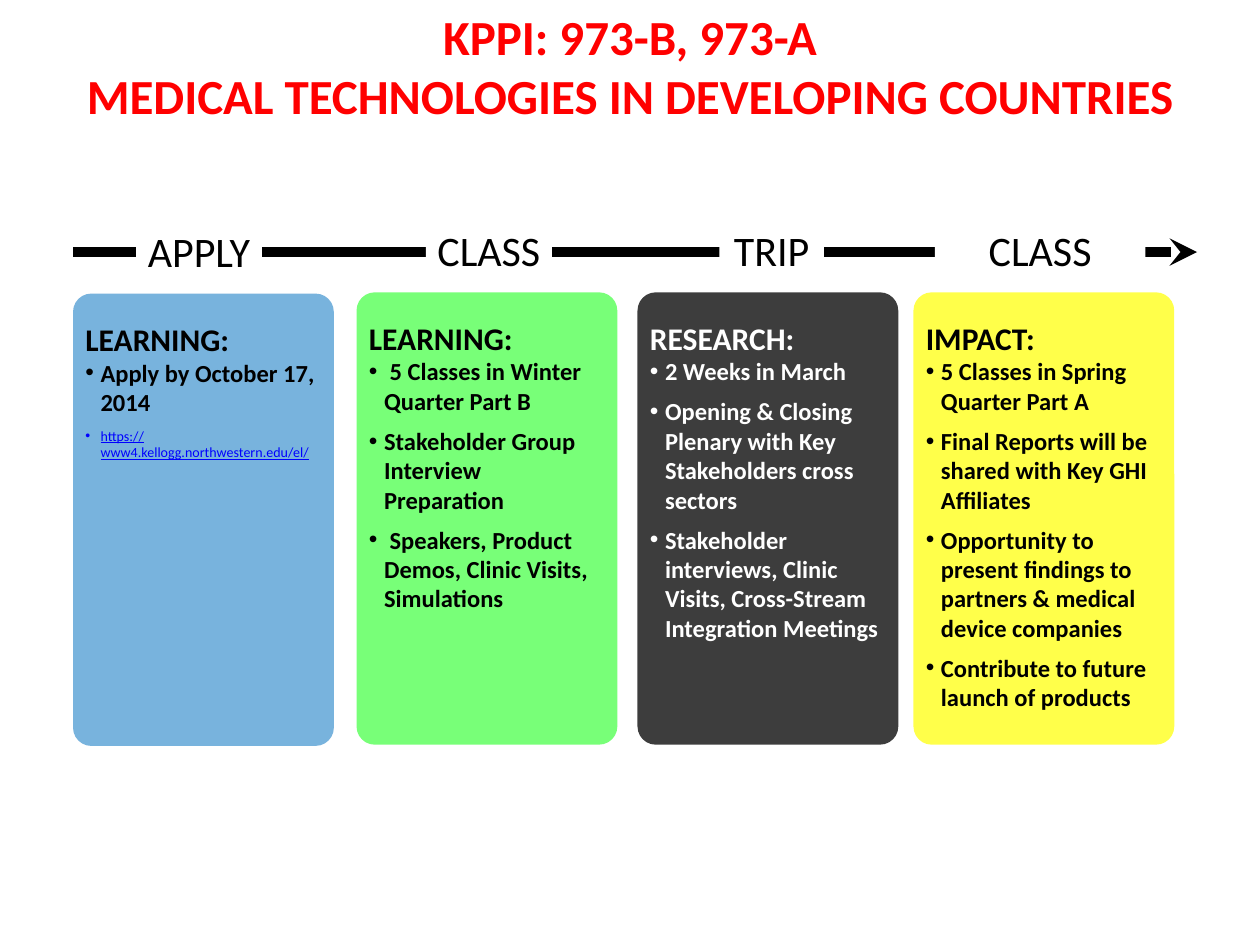
from lxml.etree import SubElement
from pptx import Presentation
from pptx.dml.color import RGBColor
from pptx.enum.shapes import MSO_CONNECTOR, MSO_SHAPE
from pptx.enum.text import MSO_ANCHOR, MSO_AUTO_SIZE, PP_ALIGN
from pptx.oxml.ns import qn
from pptx.util import Inches, Pt

BLACK = RGBColor(0, 0, 0)
WHITE = RGBColor(255, 255, 255)
RED = RGBColor(255, 0, 0)
LINK_BLUE = RGBColor(0, 0, 255)
BLUE = RGBColor(0, 0x70, 0xC0)
GREEN = RGBColor(0, 255, 0)
YELLOW = RGBColor(255, 255, 0)

TITLE_LINES = ["KPPI: 973-B, 973-A", "MEDICAL TECHNOLOGIES IN DEVELOPING COUNTRIES"]
STAGES = [
    ("APPLY", 1.08, 1.74, 1, 0),
    ("CLASS", 3.38, 1.73, 1, 0),
    ("TRIP", 5.71, 1.73, 0.83, 0.1),
    ("CLASS", 7.42, 1.73, 1.67, 0.1),
]
CARDS = [
    (0.58, 2.33, BLUE, 53, BLACK, "LEARNING:", ["Apply by October 17, 2014"]),
    (2.83, 2.32, GREEN, 53, BLACK, "LEARNING:", [
        " 5 Classes in Winter Quarter Part B",
        "Stakeholder Group Interview Preparation",
        " Speakers, Product Demos, Clinic Visits, Simulations",
    ]),
    (5.06, 2.32, BLACK, 76, WHITE, "RESEARCH:", [
        "2 Weeks in March",
        "Opening & Closing Plenary with Key Stakeholders cross sectors",
        "Stakeholder interviews, Clinic Visits, Cross-Stream Integration Meetings",
    ]),
    (7.25, 2.32, YELLOW, 71, BLACK, "IMPACT:", [
        "5 Classes in Spring Quarter Part A",
        "Final Reports will be shared with Key GHI Affiliates",
        "Opportunity to present findings to partners & medical device companies",
        "Contribute to future launch of products",
    ]),
]
APPLICATION_LINK = "https://www4.kellogg.northwestern.edu/el/"


class SlideBuilder:
    """Hold the text style and current slide, and add each kind of element."""

    font_name = "Calibri"
    card_width = 2.07
    card_height = 3.59

    def __init__(self, slide):
        self.slide = slide

    def add_run(self, paragraph, text, size, color, bold=False, underline=None):
        run = paragraph.add_run()
        run.text = text
        run.font.name = self.font_name
        run.font.size = Pt(size)
        run.font.bold = bold
        run.font.underline = underline
        run.font.color.rgb = color

    def add_title(self, lines):
        title = self.slide.shapes.title
        title.left, title.top = Inches(0), Inches(0)
        title.width, title.height = Inches(10), Inches(1.04)
        frame = title.text_frame
        frame.auto_size = MSO_AUTO_SIZE.NONE
        frame.vertical_anchor = MSO_ANCHOR.TOP
        for index, line in enumerate(lines):
            paragraph = frame.add_paragraph() if index else frame.paragraphs[0]
            paragraph.alignment = PP_ALIGN.CENTER
            self.add_run(paragraph, line, 28, RED, bold=True)

    def add_arrow(self, left, right, top):
        arrow = self.slide.shapes.add_connector(
            MSO_CONNECTOR.STRAIGHT, Inches(left), Inches(top), Inches(right), Inches(top))
        arrow.line.color.rgb = BLACK
        arrow.line.width = Pt(5.25)
        SubElement(arrow.line._get_or_add_ln(), qn("a:tailEnd"), type="stealth")
        SubElement(arrow._element.spPr, qn("a:effectLst"))

    def add_shape(self, kind, left, top, width, height, color):
        shape = self.slide.shapes.add_shape(
            kind, Inches(left), Inches(top), Inches(width), Inches(height))
        shape.shadow.inherit = False
        shape.fill.solid()
        shape.fill.fore_color.rgb = color
        shape.line.fill.background()
        return shape

    def add_stage(self, name, left, top, width, inset):
        shape = self.add_shape(MSO_SHAPE.RECTANGLE, left, top, width, 0.5, WHITE)
        frame = shape.text_frame
        frame.margin_left = frame.margin_right = Inches(inset)
        frame.vertical_anchor = MSO_ANCHOR.TOP
        paragraph = frame.paragraphs[0]
        paragraph.alignment = PP_ALIGN.CENTER
        self.add_run(paragraph, name, 24, BLACK)

    def add_card(self, left, top, color, opacity):
        card = self.add_shape(
            MSO_SHAPE.ROUNDED_RECTANGLE, left, top, self.card_width, self.card_height, color)
        card.adjustments[0] = 0.07
        color_element = card._element.spPr.find(qn("a:solidFill"))[0]
        SubElement(color_element, qn("a:alpha"), val=str(opacity * 1000))

    def add_bullet(self, frame, text, size, color, bold=True, underline=None):
        paragraph = frame.add_paragraph()
        properties = paragraph._p.get_or_add_pPr()
        properties.set("marL", str(Inches(0.12)))
        properties.set("indent", str(-Inches(0.12)))
        SubElement(properties, qn("a:buFont"), typeface="Arial")
        SubElement(properties, qn("a:buChar"), char="•")
        paragraph.space_after = Pt(6)
        self.add_run(paragraph, text, size, color, bold, underline)

    def add_card_text(self, left, top, color, heading, bullets):
        box = self.slide.shapes.add_textbox(
            Inches(left), Inches(top), Inches(self.card_width), Inches(3.25))
        frame = box.text_frame
        frame.word_wrap = True
        self.add_run(frame.paragraphs[0], heading, 18, color, bold=True)
        for bullet in bullets:
            self.add_bullet(frame, bullet, 14, color)
        return frame


def main():
    presentation = Presentation()
    presentation.slide_width = Inches(10)
    presentation.slide_height = Inches(7.5)
    builder = SlideBuilder(presentation.slides.add_slide(presentation.slide_layouts[5]))
    builder.add_title(TITLE_LINES)
    builder.add_arrow(0.58, 9.5, 2)
    for stage in STAGES:
        builder.add_stage(*stage)
    card_frames = []
    for left, top, fill, opacity, text_color, heading, bullets in CARDS:
        builder.add_card(left, top, fill, opacity)
        card_frames.append(
            builder.add_card_text(left, top + 0.16, text_color, heading, bullets))
    builder.add_bullet(
        card_frames[0], APPLICATION_LINK, 8, LINK_BLUE, bold=False, underline=True)
    presentation.save("out.pptx")


if __name__ == "__main__":
    main()
